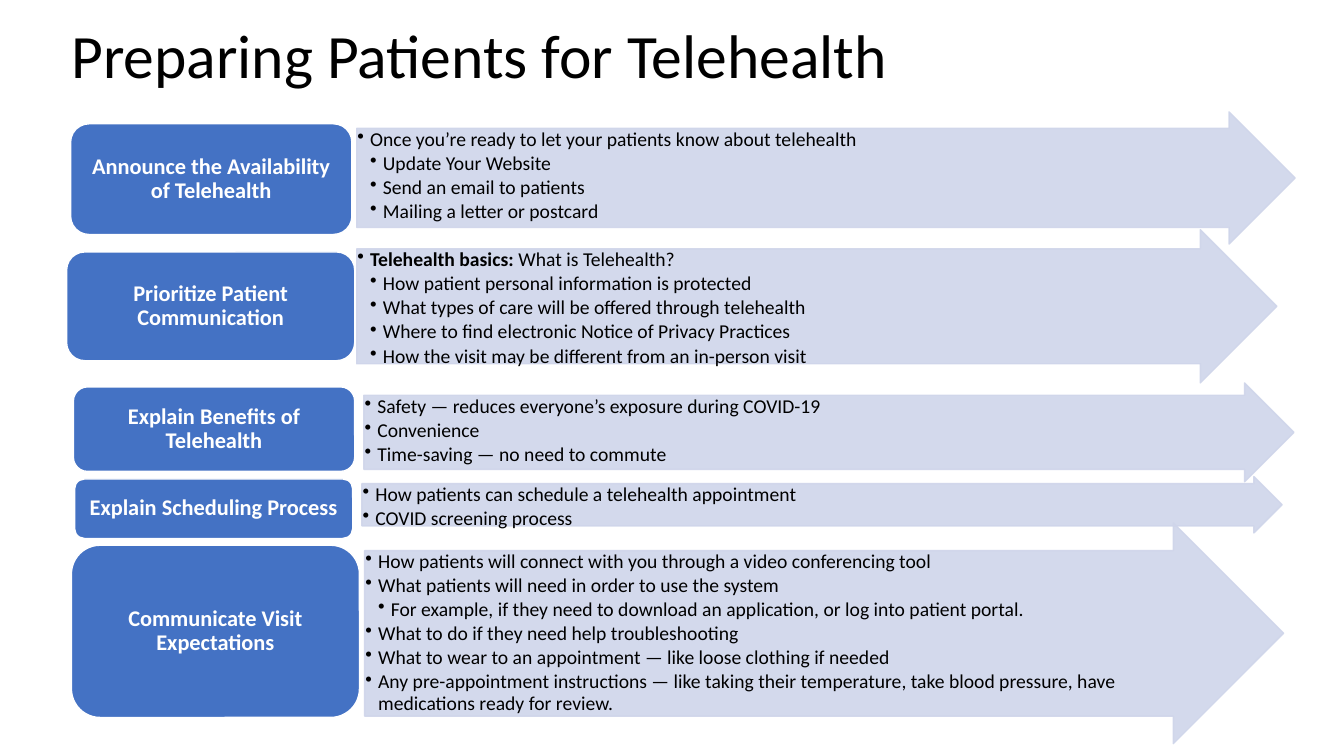
"""Build the telehealth preparation slide with five labelled arrows."""
from typing import NamedTuple

from lxml import etree
from pptx import Presentation
from pptx.dml.color import RGBColor
from pptx.enum.shapes import MSO_SHAPE
from pptx.enum.text import MSO_ANCHOR, PP_ALIGN
from pptx.oxml.ns import qn
from pptx.util import Cm, Pt

ARROW = MSO_SHAPE.RIGHT_ARROW
ROUND = MSO_SHAPE.ROUNDED_RECTANGLE
TOP, MIDDLE = MSO_ANCHOR.TOP, MSO_ANCHOR.MIDDLE
LEFT, CENTER = PP_ALIGN.LEFT, PP_ALIGN.CENTER

BLUE = RGBColor(0x44, 0x72, 0xC4)
PALE = RGBColor(0xCF, 0xD5, 0xEA)
WHITE = RGBColor(0xFF, 0xFF, 0xFF)
BLACK = RGBColor(0x00, 0x00, 0x00)
FACE = "Calibri"
INDENT = 0.32
SHAFT = 0.75


class Box(NamedTuple):
    left: float
    top: float
    width: float
    height: float


class Item(NamedTuple):
    text: str
    level: int = 1
    lead: str = ""


class Row(NamedTuple):
    label: str
    tile: Box
    arrow: Box
    items: list[Item]


TITLE = Box(1.55, -0.36, 29.21, 3.68)
ROWS = [
    Row("Announce the Availability of Telehealth",
        Box(1.78, 3.12, 7.09, 2.79), Box(8.99, 2.82, 23.65, 3.33), [
            Item("Once you’re ready to let your patients know about telehealth"),
            Item("Update Your Website", 2),
            Item("Send an email to patients", 2),
            Item("Mailing a letter or postcard", 2)]),
    Row("Prioritize Patient Communication",
        Box(1.68, 6.35, 7.26, 2.74), Box(8.99, 5.79, 23.19, 3.86), [
            Item("What is Telehealth?", lead="Telehealth basics: "),
            Item("How patient personal information is protected", 2),
            Item("What types of care will be offered through telehealth", 2),
            Item("Where to find electronic Notice of Privacy Practices", 2),
            Item("How the visit may be different from an in-person visit", 2)]),
    Row("Explain Benefits of Telehealth",
        Box(1.85, 9.75, 7.09, 2.13), Box(9.17, 9.65, 23.44, 2.49), [
            Item("Safety — reduces everyone’s exposure during COVID-19"),
            Item("Convenience"),
            Item("Time-saving — no need to commute")]),
    Row("Explain Scheduling Process",
        Box(1.88, 12.07, 7.01, 1.5), Box(9.12, 12.01, 23.19, 1.42), [
            Item("How patients can schedule a telehealth appointment"),
            Item("COVID screening process")]),
    Row("Communicate Visit Expectations",
        Box(1.8, 13.74, 7.26, 4.34), Box(9.19, 13.18, 23.16, 5.56), [
            Item("How patients will connect with you through a video conferencing tool"),
            Item("What patients will need in order to use the system"),
            Item("For example, if they need to download an application, "
                 "or log into patient portal.", 2),
            Item("What to do if they need help troubleshooting"),
            Item("What to wear to an appointment — like loose clothing if needed"),
            Item("Any pre-appointment instructions — like taking their temperature, "
                 "take blood pressure, have medications ready for review.")]),
]


def place(box: Box) -> list[Cm]:
    return [Cm(side) for side in box]


def style(para, size: float, color: RGBColor, bold: bool = False) -> None:
    para.line_spacing = 0.9
    font = para.font
    font.name, font.size, font.bold = FACE, Pt(size), bold
    font.color.rgb = color


def add_form(slide, kind, box: Box, fill: RGBColor, line: RGBColor):
    form = slide.shapes.add_shape(kind, *place(box))
    form.shadow.inherit = False
    form.fill.solid()
    form.fill.fore_color.rgb = fill
    form.line.color.rgb = line
    form.line.width = Pt(1)
    return form


def set_frame(form, anchor, side: float, edge: float, right: float):
    frame = form.text_frame
    frame.word_wrap = True
    frame.vertical_anchor = anchor
    frame.margin_left, frame.margin_right = Cm(side), Cm(right)
    frame.margin_top = frame.margin_bottom = Cm(edge)
    return frame


def add_item(para, item: Item) -> None:
    para.level = item.level
    para.alignment = LEFT
    para.space_after = Pt(2.1)
    props = para._p.get_or_add_pPr()
    props.set("marL", str(Cm(INDENT * item.level)))
    props.set("indent", str(-Cm(INDENT)))
    etree.SubElement(props, qn("a:buChar"), char="•")
    style(para, 14, BLACK)
    if item.lead:
        lead = para.add_run()
        lead.text = item.lead
        lead.font.bold = True
    para.add_run().text = item.text


def add_arrow(slide, row: Row) -> None:
    form = add_form(slide, ARROW, row.arrow, PALE, PALE)
    form.adjustments[0] = SHAFT
    form.adjustments[1] = 0.5
    for color in form._element.spPr.iter(qn("a:srgbClr")):
        etree.SubElement(color, qn("a:alpha"), val="90000")
    frame = set_frame(form, TOP, 0.02, 0.02, row.arrow.height / 4)
    for rank, item in enumerate(row.items):
        add_item(frame.add_paragraph() if rank else frame.paragraphs[0], item)


def add_tile(slide, row: Row) -> None:
    form = add_form(slide, ROUND, row.tile, BLUE, WHITE)
    para = set_frame(form, MIDDLE, 0.17, 0.08, 0.17).paragraphs[0]
    para.alignment = CENTER
    style(para, 16, WHITE, True)
    para.add_run().text = row.label


def add_title(slide) -> None:
    form = slide.shapes.add_textbox(*place(TITLE))
    para = set_frame(form, MIDDLE, 0.25, 0.13, 0.25).paragraphs[0]
    style(para, 44, BLACK)
    para.add_run().text = "Preparing Patients for Telehealth"


def main() -> None:
    deck = Presentation()
    deck.slide_width, deck.slide_height = Cm(33.87), Cm(19.05)
    slide = deck.slides.add_slide(deck.slide_layouts[6])
    add_title(slide)
    for row in ROWS:
        add_arrow(slide, row)
        add_tile(slide, row)
    deck.save("out.pptx")


if __name__ == "__main__":
    main()
